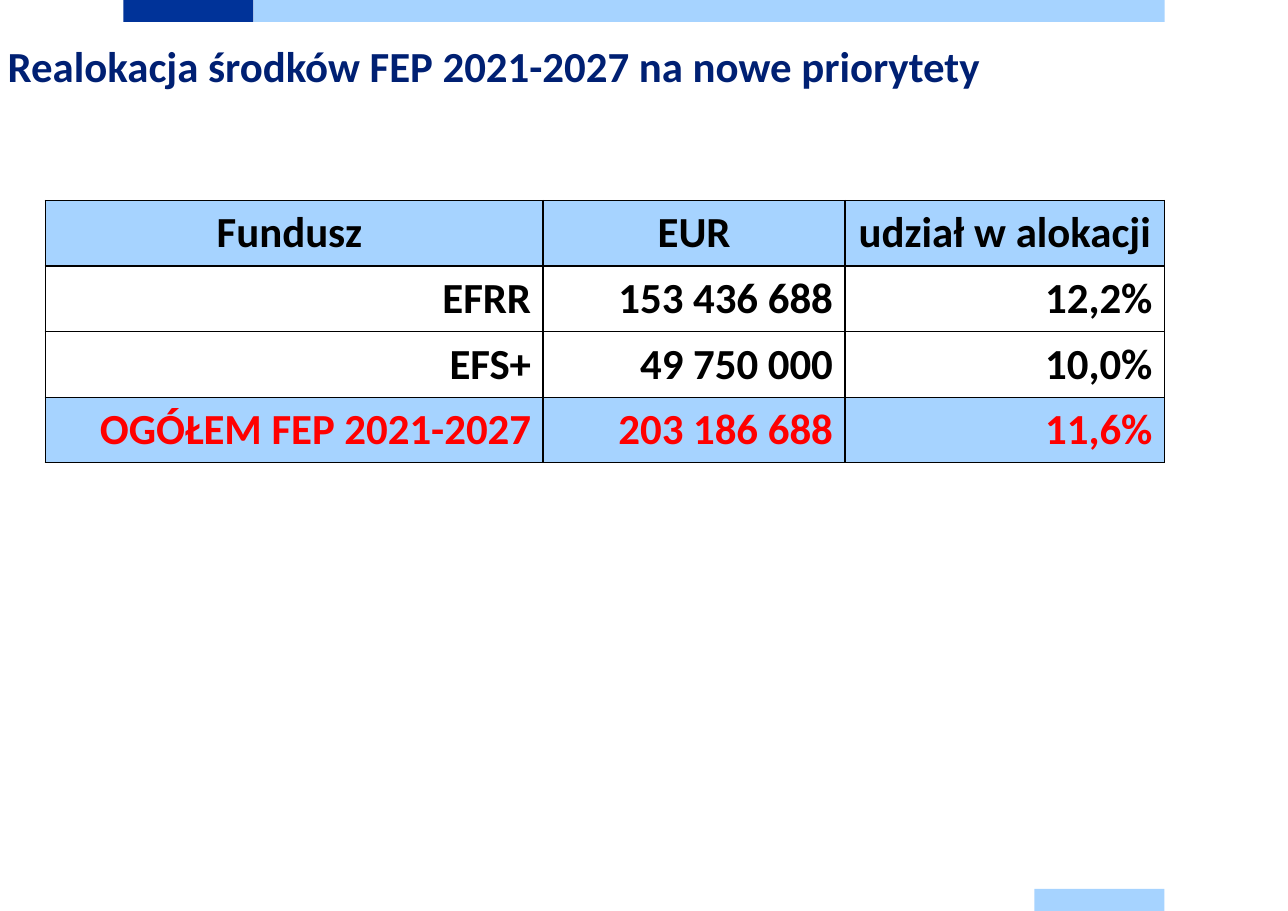
from dataclasses import dataclass

import pptx
import pptx.dml.color
import pptx.enum.shapes
import pptx.enum.text
import pptx.oxml
import pptx.oxml.ns
import pptx.util

SLIDE_WIDTH, SLIDE_HEIGHT = 11.69, 8.27
GRID_LEFT, GRID_RIGHT, GRID_COLUMNS = 1.12, 10.57, 8
COLUMN = (GRID_RIGHT - GRID_LEFT) / GRID_COLUMNS
BAR_HEIGHT = 0.2

NAVY, BLUE, SKY = "002073", "003399", "A6D3FF"
WHITE, BLACK, RED = "FFFFFF", "000000", "FF0000"
FONT_NAME, FONT_SIZE = "Calibri", 28

RIGHT = pptx.enum.text.PP_ALIGN.RIGHT
CENTER = pptx.enum.text.PP_ALIGN.CENTER


@dataclass
class Bar:
    first_column: int
    column_count: int
    top: float
    fill: str


@dataclass
class FundRow:
    texts: tuple[str, str, str]
    fill: str = WHITE
    color: str = BLACK
    alignment: pptx.enum.text.PP_ALIGN = RIGHT


BARS = [
    Bar(0, 1, 0, BLUE),
    Bar(1, 7, 0, SKY),
    Bar(7, 1, SLIDE_HEIGHT - BAR_HEIGHT, SKY),
]
TITLE = "Realokacja środków FEP 2021-2027 na nowe priorytety"
FUND_ROWS = [
    FundRow(("Fundusz ", "EUR", "udział w alokacji"), SKY, alignment=CENTER),
    FundRow(("EFRR", "153 436 688", "12,2%")),
    FundRow(("EFS+", "49 750 000", "10,0%")),
    FundRow(("OGÓŁEM FEP 2021-2027", "203 186 688", "11,6%"), SKY, RED),
]
TABLE_TOP, ROW_HEIGHT = 1.82, 0.58
TABLE_COLUMNS = (4.52, 2.74, 2.9)


def rgb(color: str) -> pptx.dml.color.RGBColor:
    return pptx.dml.color.RGBColor.from_string(color)


def add_bold_run(paragraph, text: str, color: str) -> None:
    run = paragraph.add_run()
    run.text = text
    run.font.name = FONT_NAME
    run.font.size = pptx.util.Pt(FONT_SIZE)
    run.font.bold = True
    run.font.color.rgb = rgb(color)


def add_bar(slide, bar: Bar) -> None:
    shape = slide.shapes.add_shape(
        pptx.enum.shapes.MSO_SHAPE.RECTANGLE,
        pptx.util.Inches(GRID_LEFT + bar.first_column * COLUMN),
        pptx.util.Inches(bar.top),
        pptx.util.Inches(bar.column_count * COLUMN),
        pptx.util.Inches(BAR_HEIGHT),
    )
    shape.shadow.inherit = False
    shape.fill.solid()
    shape.fill.fore_color.rgb = rgb(bar.fill)
    shape.line.fill.background()


def format_title(slide) -> None:
    title = slide.shapes.title
    title.left, title.top = pptx.util.Inches(0.07), pptx.util.Inches(0.27)
    title.width, title.height = pptx.util.Inches(11.55), pptx.util.Inches(0.6)
    frame = title.text_frame
    frame.margin_left = frame.margin_right = 0
    frame.margin_top = frame.margin_bottom = 0
    frame.word_wrap = True
    frame.auto_size = pptx.enum.text.MSO_AUTO_SIZE.NONE
    frame.vertical_anchor = pptx.enum.text.MSO_ANCHOR.TOP
    paragraph = frame.paragraphs[0]
    paragraph.alignment = pptx.enum.text.PP_ALIGN.LEFT
    paragraph.line_spacing = 1.2
    paragraph.space_before = pptx.util.Pt(0)
    paragraph.space_after = pptx.util.Pt(12)
    add_bold_run(paragraph, TITLE, NAVY)


def add_borders(cell) -> None:
    """Draw a thin black line on all four sides; call before filling the cell."""
    properties = cell._tc.get_or_add_tcPr()
    for side in ("lnL", "lnR", "lnT", "lnB"):
        properties.append(pptx.oxml.parse_xml(
            f'<a:{side} {pptx.oxml.ns.nsdecls("a")} w="{pptx.util.Pt(1)}">'
            f'<a:solidFill><a:srgbClr val="{BLACK}"/></a:solidFill></a:{side}>'
        ))


def fill_cell(cell, text: str, fund_row: FundRow) -> None:
    add_borders(cell)
    cell.fill.solid()
    cell.fill.fore_color.rgb = rgb(fund_row.fill)
    cell.margin_left = cell.margin_right = pptx.util.Inches(0.11)
    cell.margin_top = cell.margin_bottom = pptx.util.Inches(0.06)
    cell.vertical_anchor = pptx.enum.text.MSO_ANCHOR.MIDDLE
    paragraph = cell.text_frame.paragraphs[0]
    paragraph.alignment = fund_row.alignment
    add_bold_run(paragraph, text, fund_row.color)


def add_fund_table(slide) -> None:
    width = sum(TABLE_COLUMNS)
    table = slide.shapes.add_table(
        len(FUND_ROWS), len(TABLE_COLUMNS),
        pptx.util.Inches(GRID_RIGHT - width), pptx.util.Inches(TABLE_TOP),
        pptx.util.Inches(width), pptx.util.Inches(ROW_HEIGHT * len(FUND_ROWS)),
    ).table
    table.first_row = table.horz_banding = False
    for column, column_width in zip(table.columns, TABLE_COLUMNS):
        column.width = pptx.util.Inches(column_width)
    for row, fund_row in zip(table.rows, FUND_ROWS):
        row.height = pptx.util.Inches(ROW_HEIGHT)
        for cell, text in zip(row.cells, fund_row.texts):
            fill_cell(cell, text, fund_row)


def main() -> None:
    presentation = pptx.Presentation()
    presentation.slide_width = pptx.util.Inches(SLIDE_WIDTH)
    presentation.slide_height = pptx.util.Inches(SLIDE_HEIGHT)
    title_only = presentation.slide_layouts.get_by_name("Title Only")
    slide = presentation.slides.add_slide(title_only)
    for bar in BARS:
        add_bar(slide, bar)
    format_title(slide)
    add_fund_table(slide)
    presentation.save("out.pptx")


if __name__ == "__main__":
    main()
